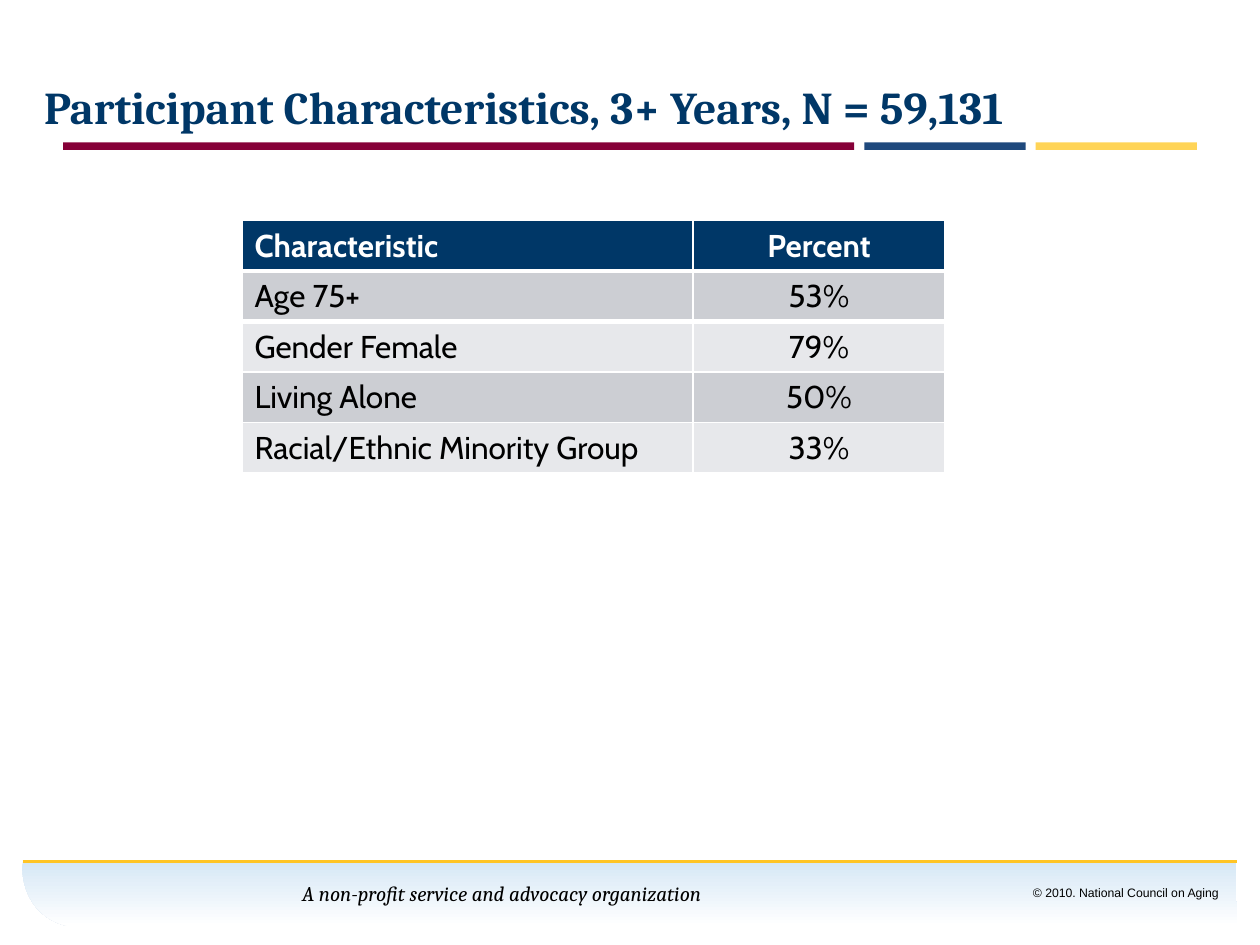
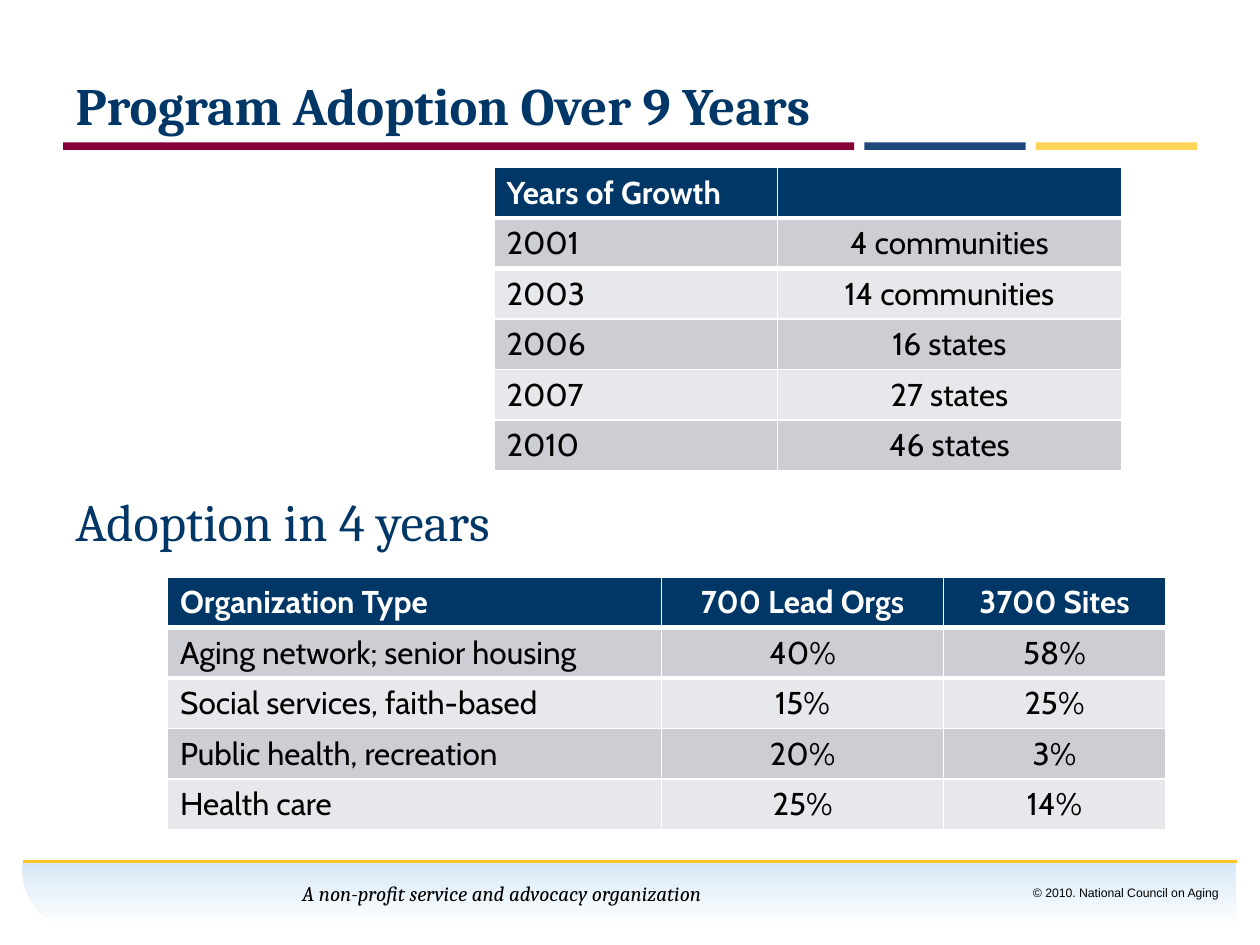
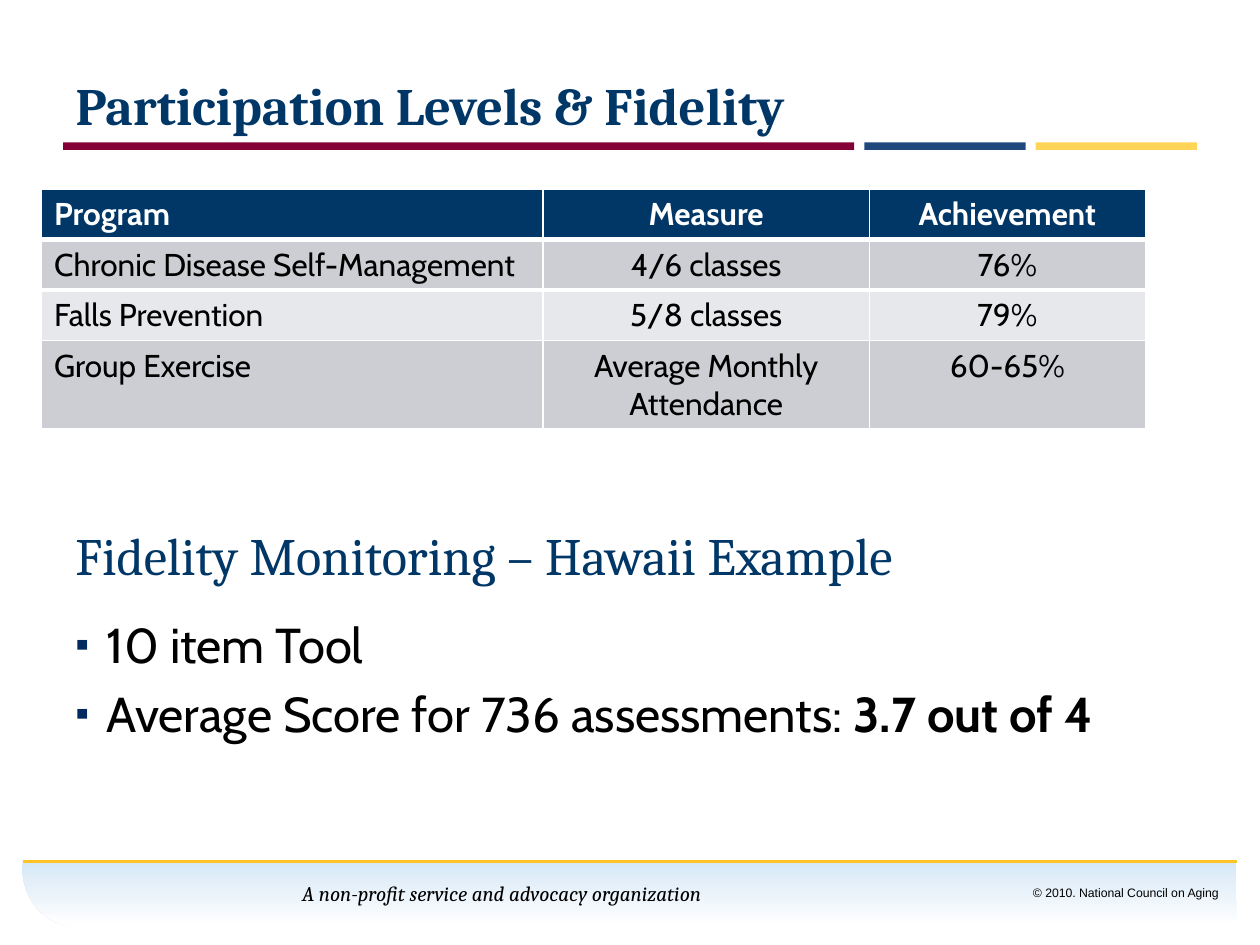
"""Build three slides on programme participants, adoption and fidelity."""
from dataclasses import dataclass
from lxml import etree
from pptx import Presentation
from pptx.dml.color import RGBColor
from pptx.enum.shapes import MSO_CONNECTOR, MSO_SHAPE
from pptx.enum.text import MSO_ANCHOR, MSO_AUTO_SIZE, PP_ALIGN
from pptx.oxml.ns import qn
from pptx.util import Inches, Pt


@dataclass(frozen=True)
class Theme:
    navy: str = "003767"
    maroon: str = "860038"
    blue: str = "1F497D"
    yellow: str = "FFD457"
    gold: str = "FFC425"
    sky: str = "D5E7F5"
    white: str = "FFFFFF"
    black: str = "000000"
    dark: str = "CCCED3"
    light: str = "E7E8EB"
    mark: str = "012A5E"
    serif: str = "Cambria"
    sans: str = "Cabin"
    plain: str = "Arial"
    head: int = 30
    tight: int = 26
    body: int = 28
    cell: int = 18
    motto: int = 12
    small: int = 7


theme = Theme()
rgb = RGBColor.from_string


def write(frame, lines, size, face, color, align=PP_ALIGN.LEFT, bold=False, bullet=None):
    """Fill a text frame; each line is a list of (text, bold) runs or a string."""
    frame.word_wrap = True
    for i, line in enumerate(lines):
        para = frame.paragraphs[0] if i == 0 else frame.add_paragraph()
        para.alignment = align
        if i:
            para.space_before = Pt(size * 0.2)
        if bullet:
            props = para._p.get_or_add_pPr()
            props.set("marL", str(Inches(0.25)))
            props.set("indent", str(-Inches(0.25)))
            tint = etree.SubElement(props, qn("a:buClr"))
            etree.SubElement(tint, qn("a:srgbClr"), val=theme.mark)
            etree.SubElement(props, qn("a:buSzPct"), val="80000")
            etree.SubElement(props, qn("a:buFont"), typeface=theme.plain)
            etree.SubElement(props, qn("a:buChar"), char=bullet)
        font = para.font
        font.size, font.name, font.bold = Pt(size), face, bold
        font.color.rgb = rgb(color)
        for text, strong in [(line, None)] if isinstance(line, str) else line:
            run = para.add_run()
            run.text = text
            if strong:
                run.font.bold = True


def grid(slide, left, top, widths, rows):
    """Add a table with a navy header and two alternating row colours."""
    high = Inches(0.4)
    table = slide.shapes.add_table(len(rows), len(widths), Inches(left), Inches(top),
                                   Inches(sum(widths)), high * len(rows)).table
    for col, width in zip(table.columns, widths):
        col.width = Inches(width)
    for r, row in enumerate(rows):
        table.rows[r].height = high
        shade = theme.navy if r == 0 else theme.dark if r % 2 else theme.light
        for c, text in enumerate(row):
            cell = table.cell(r, c)
            if r < 2:
                props = cell._tc.get_or_add_tcPr()
                side = etree.SubElement(props, qn("a:lnT" if r else "a:lnB"), w=str(Pt(3)))
                paint = etree.SubElement(side, qn("a:solidFill"))
                etree.SubElement(paint, qn("a:srgbClr"), val=theme.white)
            cell.fill.solid()
            cell.fill.fore_color.rgb = rgb(shade)
            if text:
                write(cell.text_frame, [text], theme.cell, theme.sans,
                      theme.black if r else theme.white,
                      PP_ALIGN.CENTER if c else PP_ALIGN.LEFT, bold=r == 0)


deck = Presentation()
deck.slide_width, deck.slide_height = Inches(10), Inches(7.5)

heads = [
    ("Participant Characteristics, 3+ Years, N = 59,131", 0.25, 0.33, 9.25, theme.tight),
    ("Program Adoption Over 9 Years", 0.5, 0.35, 9, theme.head),
    ("Participation Levels & Fidelity", 0.5, 0.35, 9, theme.head),
]
bars = [(0.5, 6.28, theme.maroon), (6.86, 1.28, theme.blue), (8.22, 1.28, theme.yellow)]
notes = [
    ("© 2010. National Council on Aging", 7.28, 6.98, 2.49, 0.22,
     theme.small, theme.plain, PP_ALIGN.RIGHT, False),
    ("A non-profit service and advocacy organization", 2.3, 6.94, 4.73, 0.3,
     theme.motto, theme.serif, PP_ALIGN.LEFT, True),
]

curve = [(0.18, 6.84), (0.16, 7.07), (0.29, 7.3), (0.54, 7.35)]
edge = []
for step in range(13):
    t = step / 12
    parts = ((1 - t) ** 3, 3 * t * (1 - t) ** 2, 3 * t * t * (1 - t), t ** 3)
    edge.append(tuple(Inches(sum(k * p[axis] for k, p in zip(parts, curve)))
                      for axis in (0, 1)))
edge += [(Inches(9.82), Inches(7.35)), (Inches(9.81), Inches(6.83))]

for title, left, top, width, size in heads:
    slide = deck.slides.add_slide(deck.slide_layouts[5])
    shapes = slide.shapes
    for x, wide, color in bars:
        bar = shapes.add_shape(MSO_SHAPE.RECTANGLE, Inches(x), Inches(1.13),
                               Inches(wide), Inches(0.06))
        bar.shadow.inherit = False
        bar.fill.solid()
        bar.fill.fore_color.rgb = rgb(color)
        bar.line.fill.background()

    pen = shapes.build_freeform(*edge[0], scale=1.0)
    pen.add_line_segments(edge[1:], close=True)
    band = pen.convert_to_shape()
    band.shadow.inherit = False
    band.line.fill.background()
    band.fill.gradient()
    band.fill.gradient_angle = 270
    for stop, color in zip(band.fill.gradient_stops, (theme.sky, theme.white)):
        stop.color.rgb = rgb(color)

    rule = shapes.add_connector(MSO_CONNECTOR.STRAIGHT, Inches(0.18), Inches(6.84),
                                Inches(9.82), Inches(6.84))
    rule.line.color.rgb = rgb(theme.gold)
    rule.line.width = Pt(1.5)
    etree.SubElement(rule._element.spPr, qn("a:effectLst"))

    for text, x, y, wide, high, small, face, align, slant in notes:
        frame = shapes.add_textbox(Inches(x), Inches(y), Inches(wide), Inches(high)).text_frame
        write(frame, [text], small, face, theme.black, align)
        frame.paragraphs[0].font.italic = slant

    head = shapes.title
    head.left, head.top = Inches(left), Inches(top)
    head.width, head.height = Inches(width), Inches(0.78)
    head.text_frame.auto_size = MSO_AUTO_SIZE.NONE
    head.text_frame.vertical_anchor = MSO_ANCHOR.BOTTOM
    write(head.text_frame, [title], size, theme.serif, theme.navy, bold=True)

first, second, third = deck.slides

grid(first, 1.92, 1.75, [3.58, 2], [
    ("Characteristic", "Percent"),
    ("Age 75+", "53%"),
    ("Gender Female", "79%"),
    ("Living Alone", "50%"),
    ("Racial/Ethnic Minority Group", "33%"),
])

grid(second, 3.92, 1.33, [2.25, 2.73], [
    ("Years of Growth", ""),
    ("2001", "4 communities"),
    ("2003", "14 communities"),
    ("2006", "16 states"),
    ("2007", "27 states"),
    ("2010", "46 states"),
])
grid(second, 1.33, 4.58, [3.92, 2.24, 1.76], [
    ("Organization Type", "700 Lead Orgs", "3700 Sites"),
    ("Aging network; senior housing", "40%", "58%"),
    ("Social services, faith-based", "15%", "25%"),
    ("Public health, recreation", "20%", "3%"),
    ("Health care", "25%", "14%"),
])

grid(third, 0.33, 1.5, [3.98, 2.59, 2.19], [
    ("Program", "Measure", "Achievement"),
    ("Chronic Disease Self-Management", "4/6 classes", "76%"),
    ("Falls Prevention", "5/8 classes", "79%"),
    ("Group Exercise", "Average Monthly Attendance", "60-65%"),
])

subs = [
    (second, "Adoption in 4 years", 3.83, 0.63, MSO_ANCHOR.TOP),
    (third, "Fidelity Monitoring – Hawaii Example", 3.92, 0.78, MSO_ANCHOR.BOTTOM),
]
for slide, text, top, high, anchor in subs:
    frame = slide.shapes.add_textbox(Inches(0.5), Inches(top), Inches(9), Inches(high)).text_frame
    frame.vertical_anchor = anchor
    write(frame, [text], theme.head, theme.serif, theme.navy)

points = third.shapes.add_textbox(Inches(0.5), Inches(4.83), Inches(9), Inches(1.17))
write(points.text_frame, [
    "10 item Tool",
    [("Average Score for 736 assessments: ", False), ("3.7 out of 4", True)],
], theme.body, theme.sans, theme.black, bullet="▪")

deck.save("out.pptx")
